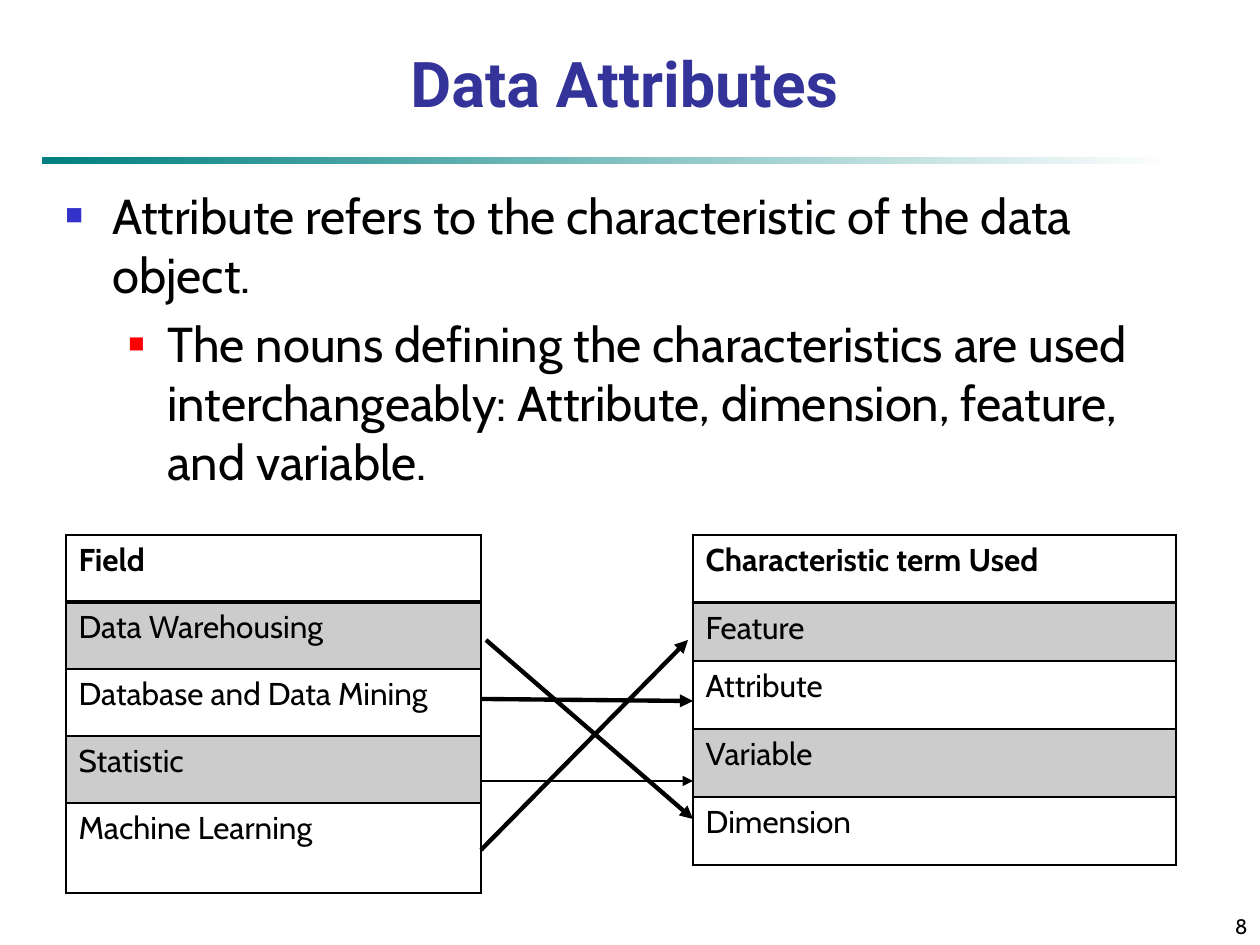
from dataclasses import dataclass

from lxml import etree
from pptx import Presentation
from pptx import util as u
from pptx.dml.color import RGBColor
from pptx.enum import shapes, text
from pptx.oxml import ns


@dataclass(frozen=True)
class Theme:
    title: str = "333399"
    ink: str = "000000"
    paper: str = "FFFFFF"
    band: str = "CCCCCC"
    rule: str = "008080"
    bullets: tuple = ("3333CC", "FF0000")
    head_font: str = "Roboto"
    body_font: str = "Cabin"
    title_pt: int = 36
    body_pt: int = 28
    cell_pt: int = 18
    number_pt: int = 12


T = Theme()
EMU_PER_PX = 914400 / 126


def px(n):
    return u.Emu(round(n * EMU_PER_PX))


def rgb(value):
    return RGBColor.from_string(value)


def assign(obj, values):
    for name, value in values.items():
        setattr(obj, name, value)


def sub(parent, tag, **attrs):
    el = etree.SubElement(parent, ns.qn(tag))
    for name, value in attrs.items():
        el.set(name, str(value))
    return el


def write(p, words, size, color=T.ink, font=T.body_font, bold=False):
    r = p.add_run()
    r.text = words
    assign(r.font, {"size": u.Pt(size), "name": font, "bold": bold})
    r.font.color.rgb = rgb(color)


def add_text(s, box, **frame):
    tf = s.shapes.add_textbox(*map(px, box)).text_frame
    assign(tf, {"word_wrap": True, **frame})
    return tf


def add_title(s, box, words):
    tf = add_text(s, box, vertical_anchor=text.MSO_ANCHOR.BOTTOM)
    p = tf.paragraphs[0]
    p.alignment = text.PP_ALIGN.CENTER
    write(p, words, T.title_pt, T.title, T.head_font, True)


def add_rule(s, box):
    sp = s.shapes.add_shape(shapes.MSO_SHAPE.RECTANGLE, *map(px, box))
    sp.shadow.inherit = False
    sp.line.fill.background()
    sp.fill.gradient()
    sp.fill.gradient_angle = 0
    for stop, color, position in zip(sp.fill.gradient_stops, (T.rule, T.paper), (0, 1)):
        stop.color.rgb = rgb(color)
        stop.position = position


def add_body(s, box, items):
    tf = add_text(s, box)
    for i, (level, words, margin, indent, bullet_size) in enumerate(items):
        p = tf.add_paragraph() if i else tf.paragraphs[0]
        assign(p, {"level": level, "space_before": u.Pt(6)})
        pPr = p._p.get_or_add_pPr()
        pPr.set("marL", str(px(margin)))
        pPr.set("indent", str(px(indent)))
        sub(sub(pPr, "a:buClr"), "a:srgbClr", val=T.bullets[level])
        sub(pPr, "a:buSzPct", val=bullet_size * 1000)
        sub(pPr, "a:buFont", typeface="Arial")
        sub(pPr, "a:buChar", char="■")
        write(p, words, T.body_pt)


def set_borders(cell, widths):
    tcPr = cell._tc.get_or_add_tcPr()
    for i, (side, width) in enumerate(widths.items()):
        ln = etree.Element(ns.qn("a:" + side), w=str(u.Pt(width)))
        sub(sub(ln, "a:solidFill"), "a:srgbClr", val=T.ink)
        tcPr.insert(i, ln)


def add_list_table(s, box, heights, entries):
    x, y, w = box
    frame = s.shapes.add_table(len(entries), 1, *map(px, (x, y, w, sum(heights))))
    tbl = frame.table
    assign(tbl, {"first_row": False, "horz_banding": False})
    for i, (height, words) in enumerate(zip(heights, entries)):
        tbl.rows[i].height = px(height)
        cell = tbl.cell(i, 0)
        cell.fill.solid()
        cell.fill.fore_color.rgb = rgb(T.band if i % 2 else T.paper)
        set_borders(cell, {"lnL": 1, "lnR": 1, "lnT": 2 if i == 1 else 1,
                           "lnB": 1 if i else 2})
        write(cell.text_frame.paragraphs[0], words, T.cell_pt, bold=i == 0)


def add_arrows(s, origin, arrows):
    x, y = origin
    for x1, y1, x2, y2, width in arrows:
        ends = map(px, (x + x1, y + y1, x + x2, y + y2))
        c = s.shapes.add_connector(shapes.MSO_CONNECTOR.STRAIGHT, *ends)
        c.line.width = u.Pt(width)
        c.line.color.rgb = rgb(T.ink)
        sub(c.line._get_or_add_ln(), "a:tailEnd", type="triangle")
        sub(c._element.spPr, "a:effectLst")


def add_number(s, box, words):
    tf = add_text(s, box, vertical_anchor=text.MSO_ANCHOR.BOTTOM)
    p = tf.paragraphs[0]
    p.alignment = text.PP_ALIGN.RIGHT
    write(p, words, T.number_pt)


def main():
    prs = Presentation()
    assign(prs, {"slide_width": px(1260), "slide_height": px(945)})
    s = prs.slides.add_slide(prs.slide_layouts[6])
    add_rule(s, (42, 157, 1134, 7))
    add_title(s, (21, 42, 1207, 84), "Data Attributes")
    add_body(s, (53, 179, 1155, 714), [
        (0, "Attribute refers to the characteristic of the data object.", 47, -47, 60),
        (1, "The nouns defining the characteristics are used interchangeably: "
            "Attribute, dimension, feature, and variable.", 102, -39, 55),
    ])
    add_number(s, (998, 892, 262, 53), "8")
    add_list_table(s, (66, 535, 415), (67, 67, 67, 67, 90), (
        "Field", "Data Warehousing", "Database and Data Mining",
        "Statistic", "Machine Learning"))
    add_list_table(s, (693, 535, 483), (68, 58, 68, 68, 68), (
        "Characteristic term Used", "Feature", "Attribute", "Variable", "Dimension"))
    add_arrows(s, (481, 535), (
        (0, 315, 207, 105, 2.5),
        (0, 246, 212, 246, 1.5),
        (5, 105, 212, 284, 2.5),
        (0, 164, 212, 166, 2.5)))
    prs.save("out.pptx")


if __name__ == "__main__":
    main()
